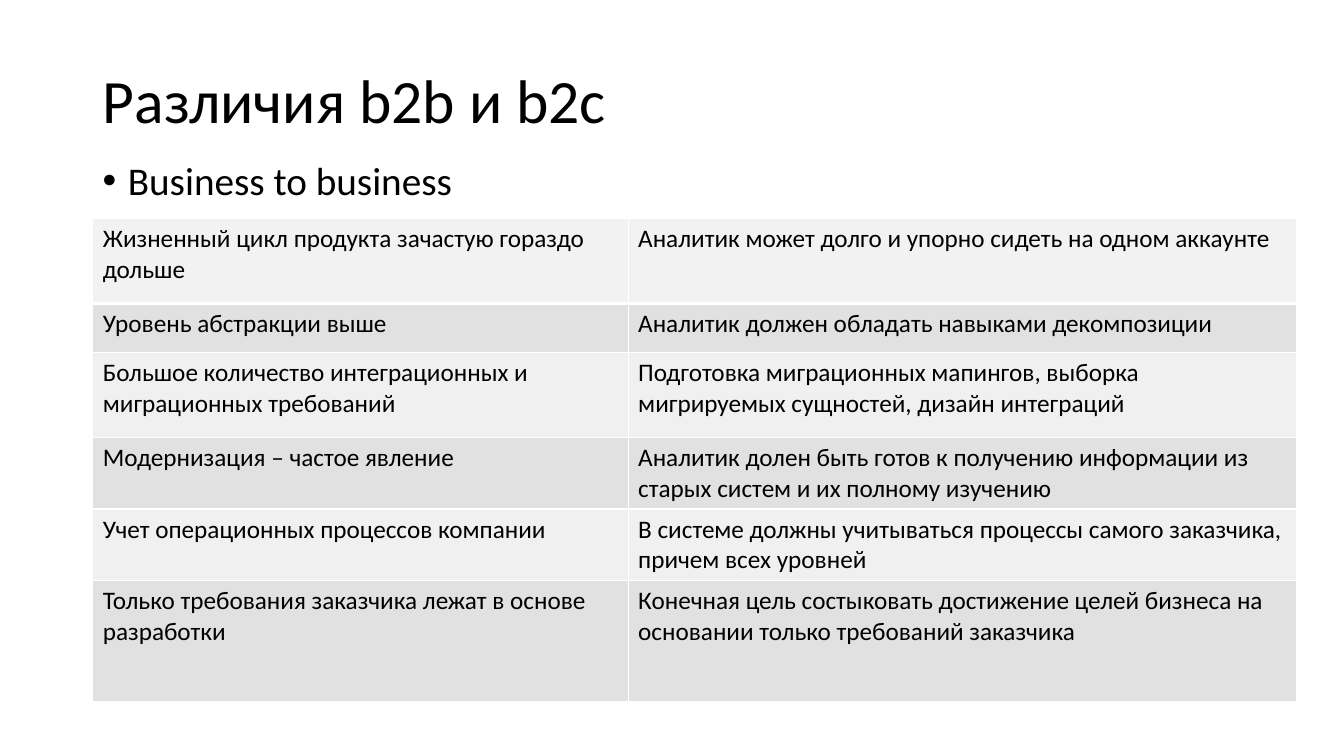
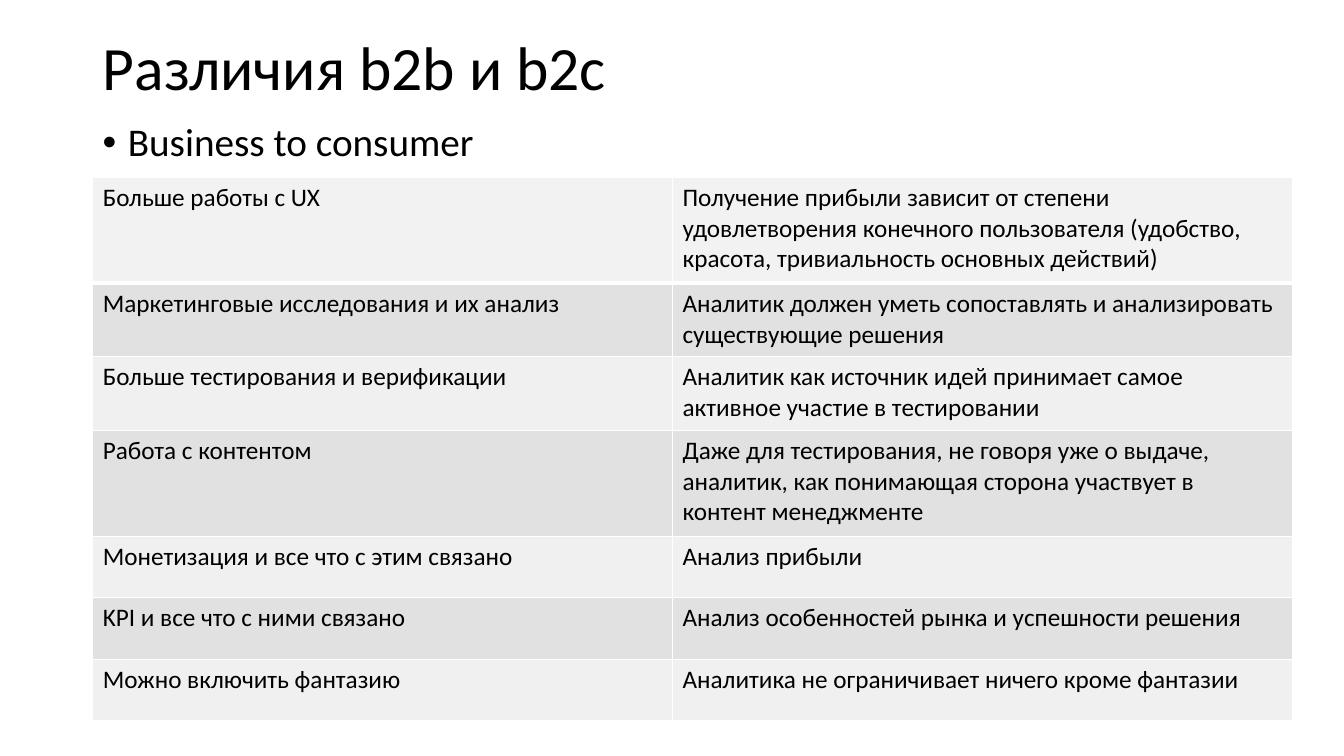
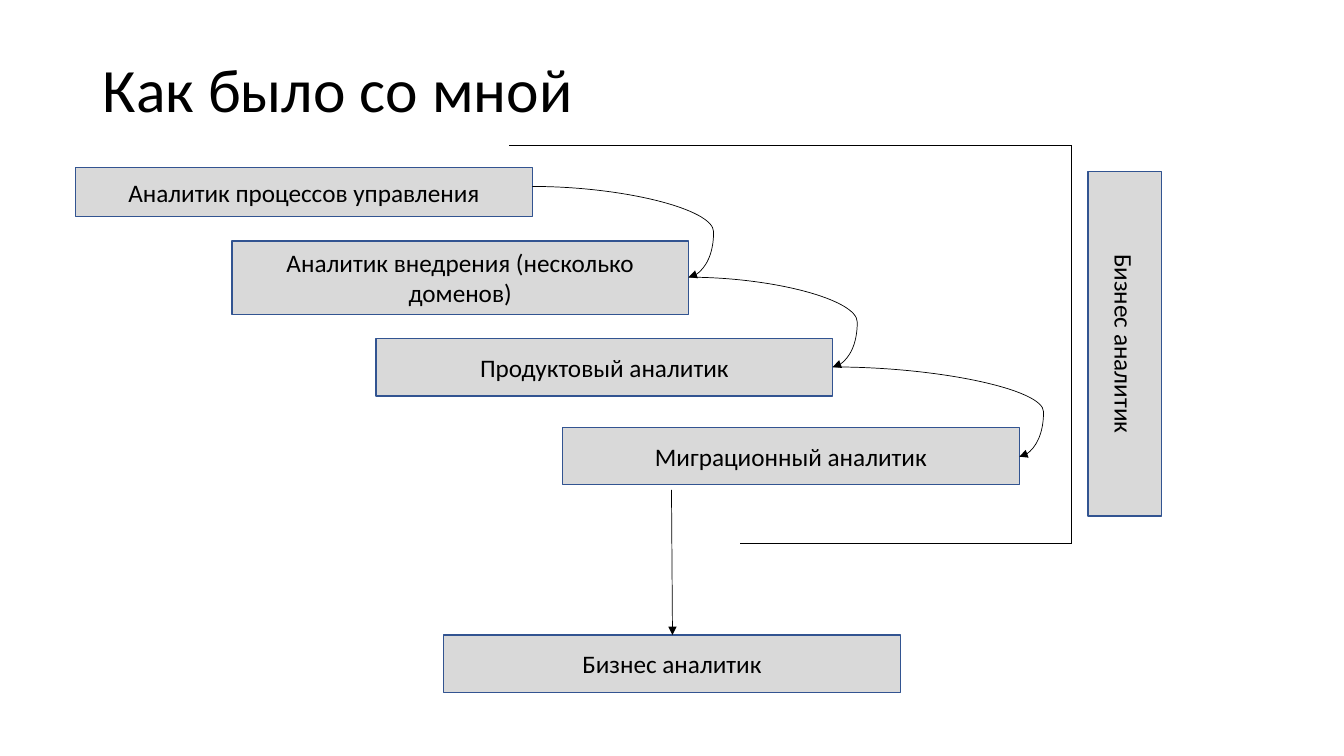
import lxml.etree
import pptx
import pptx.dml.color
import pptx.enum.shapes
import pptx.enum.text
import pptx.oxml.ns
import pptx.util

Inches = pptx.util.Inches
Pt = pptx.util.Pt
qn = pptx.oxml.ns.qn
color = pptx.dml.color.RGBColor.from_string
ALIGN = pptx.enum.text.PP_ALIGN
MIDDLE = pptx.enum.text.MSO_ANCHOR.MIDDLE

FONT = "Calibri"
BLACK = "000000"
WHITE = "FFFFFF"
BOX_FILL = "D9D9D9"
BOX_LINE = "325491"
FIRST_ROW = "F2F2F2"
BANDS = ["F0F0F0", "E1E1E1"]
LEFT = 0.92
TEXT_WIDTH = 11.5


def write(frame, text, size=18, align=ALIGN.LEFT, spacing=None):
    frame.word_wrap = True
    para = frame.paragraphs[0]
    para.alignment = align
    para.line_spacing = spacing
    span = para.add_run()
    span.text = text
    span.font.name = FONT
    span.font.size = Pt(size)
    span.font.color.rgb = color(BLACK)
    return para


def connect(page, start, end, arrow=False, bend=None):
    """Draw a thin line; bend makes it a curve reaching that share of its width."""
    kinds = pptx.enum.shapes.MSO_CONNECTOR
    kind = kinds.CURVE if bend else kinds.STRAIGHT
    line = page.shapes.add_connector(kind, *map(Inches, start + end))
    line.line.color.rgb = color(BLACK)
    line.line.width = Pt(0.5)
    properties = line._element.spPr
    if arrow:
        outline = properties.find(qn("a:ln"))
        lxml.etree.SubElement(outline, qn("a:tailEnd"), type="triangle")
    if bend:
        guides = properties.find(qn("a:prstGeom")).find(qn("a:avLst"))
        lxml.etree.SubElement(guides, qn("a:gd"), name="adj1",
                              fmla=f"val {round(bend * 100000)}")
    lxml.etree.SubElement(properties, qn("a:effectLst"))


deck = pptx.Presentation()
deck.slide_width = Inches(13.33)
deck.slide_height = Inches(7.5)

# Titles: text, top, height
titles = [
    ("Различия b2b и b2c", 0.5, 1.05),
    ("Различия b2b и b2c", 0.25, 0.91),
    ("Как было со мной", 0.4, 1.04),
]
pages = []
for text, top, height in titles:
    page = deck.slides.add_slide(deck.slide_layouts[5])
    title = page.shapes.title
    title.left, title.top = Inches(LEFT), Inches(top)
    title.width, title.height = Inches(TEXT_WIDTH), Inches(height)
    title.text_frame.vertical_anchor = MIDDLE
    title.text_frame.auto_size = pptx.enum.text.MSO_AUTO_SIZE.NONE
    write(title.text_frame, text, size=44, spacing=0.9)
    pages.append(page)

# Comparison tables
comparisons = [
    {
        "page": pages[0],
        "heading": "Business to business",
        "heading_top": 1.55,
        "table_top": 2.17,
        "widths": [5.31, 6.63],
        "rows": [
            (0.84, "Жизненный цикл продукта зачастую гораздо дольше",
             "Аналитик может долго и упорно сидеть на одном аккаунте"),
            (0.49, "Уровень абстракции выше",
             "Аналитик должен обладать навыками декомпозиции"),
            (0.84, "Большое количество интеграционных и миграционных требований",
             "Подготовка миграционных мапингов, выборка мигрируемых сущностей, "
             "дизайн интеграций"),
            (0.71, "Модернизация – частое явление",
             "Аналитик долен быть готов к получению информации из старых систем "
             "и их полному изучению"),
            (0.71, "Учет операционных процессов компании",
             "В системе должны учитываться процессы самого заказчика, "
             "причем всех уровней"),
            (1.2, "Только требования заказчика лежат в основе разработки",
             "Конечная цель состыковать достижение целей бизнеса на основании "
             "только требований заказчика"),
        ],
    },
    {
        "page": pages[1],
        "heading": "Business to consumer",
        "heading_top": 1.17,
        "table_top": 1.76,
        "widths": [5.75, 6.15],
        "rows": [
            (1.05, "Больше работы с UX",
             "Получение прибыли зависит от степени удовлетворения конечного "
             "пользователя (удобство, красота, тривиальность основных действий)"),
            (0.73, "Маркетинговые исследования и их анализ",
             "Аналитик должен уметь сопоставлять и анализировать "
             "существующие решения"),
            (0.73, "Больше тестирования и верификации",
             "Аналитик как источник идей принимает самое активное участие "
             "в тестировании"),
            (1.05, "Работа с контентом",
             "Даже для тестирования, не говоря уже о выдаче, аналитик, как "
             "понимающая сторона участвует в контент менеджменте"),
            (0.61, "Монетизация и все что с этим связано", "Анализ прибыли"),
            (0.61, "KPI и все что с ними связано",
             "Анализ особенностей рынка и успешности решения"),
            (0.61, "Можно включить фантазию",
             "Аналитика не ограничивает ничего кроме фантазии"),
        ],
    },
]
for comparison in comparisons:
    shapes = comparison["page"].shapes
    box = shapes.add_textbox(Inches(LEFT), Inches(comparison["heading_top"]),
                             Inches(TEXT_WIDTH), Inches(0.55))
    para = write(box.text_frame, comparison["heading"], size=28, spacing=0.9)
    para.space_before = Pt(10)
    settings = para._p.get_or_add_pPr()
    settings.set("marL", str(Inches(0.25)))
    settings.set("indent", str(Inches(-0.25)))
    lxml.etree.SubElement(settings, qn("a:buFont"), typeface="Arial")
    lxml.etree.SubElement(settings, qn("a:buChar"), char="•")

    rows, widths = comparison["rows"], comparison["widths"]
    table = shapes.add_table(
        len(rows), len(widths), Inches(LEFT), Inches(comparison["table_top"]),
        Inches(sum(widths)), Inches(sum(row[0] for row in rows))).table
    table.first_row = False
    table.horz_banding = False
    for column, width in zip(table.columns, widths):
        column.width = Inches(width)
    for index, (height, *texts) in enumerate(rows):
        table.rows[index].height = Inches(height)
        for cell, text in zip(table.rows[index].cells, texts):
            write(cell.text_frame, text)
            cell_settings = cell._tc.get_or_add_tcPr()
            for side in ("L", "R", "T", "B"):
                thick = (index, side) in [(0, "B"), (1, "T")]
                border = lxml.etree.SubElement(cell_settings, qn(f"a:ln{side}"),
                                               w=str(Pt(3 if thick else 1)))
                fill = lxml.etree.SubElement(border, qn("a:solidFill"))
                lxml.etree.SubElement(fill, qn("a:srgbClr"), val=WHITE)
            cell.fill.solid()
            cell.fill.fore_color.rgb = color(BANDS[index % 2] if index else FIRST_ROW)

# Career path; the two-line role is taller around the same middle
career = pages[2]
ROLE_WIDTH = 4.53
ROLE_HEIGHT = 0.57
roles = [
    ("Аналитик процессов управления", 0.75, 1.66, ROLE_WIDTH, 0.49),
    ("Аналитик внедрения (несколько доменов)", 2.3, 2.39, ROLE_WIDTH, 0.73),
    ("Продуктовый аналитик", 3.73, 3.36, ROLE_WIDTH, ROLE_HEIGHT),
    ("Миграционный аналитик", 5.58, 4.24, ROLE_WIDTH, ROLE_HEIGHT),
    ("Бизнес аналитик", 4.4, 6.3, ROLE_WIDTH, ROLE_HEIGHT),
    ("Бизнес аналитик", 10.79, 1.7, 0.73, 3.42),
]
for text, left, top, width, height in roles:
    box = career.shapes.add_shape(pptx.enum.shapes.MSO_SHAPE.RECTANGLE,
                                  *map(Inches, (left, top, width, height)))
    box.shadow.inherit = False
    box.fill.solid()
    box.fill.fore_color.rgb = color(BOX_FILL)
    box.line.color.rgb = color(BOX_LINE)
    box.line.width = Pt(1)
    box.text_frame.vertical_anchor = MIDDLE
    write(box.text_frame, text, align=ALIGN.CENTER)
    if height > width:
        box.text_frame._txBody.bodyPr.set("vert", "vert")

# Curves run from the right edge of each role to the next one
steps = [(5.28, 1.85), (6.83, 2.75), (8.26, 3.64), (10.11, 4.53)]
for start, end, bend in zip(steps, steps[1:], [1.16, 1.17, 1.13]):
    connect(career, start, end, arrow=True, bend=bend)
connect(career, (6.66, 4.86), (6.67, 6.3), arrow=True)

# Bracket that joins all the roles
bracket = [(5.05, 1.44), (10.63, 1.44), (10.63, 5.39), (7.34, 5.39)]
for start, end in zip(bracket, bracket[1:]):
    connect(career, start, end)

deck.save("out.pptx")
